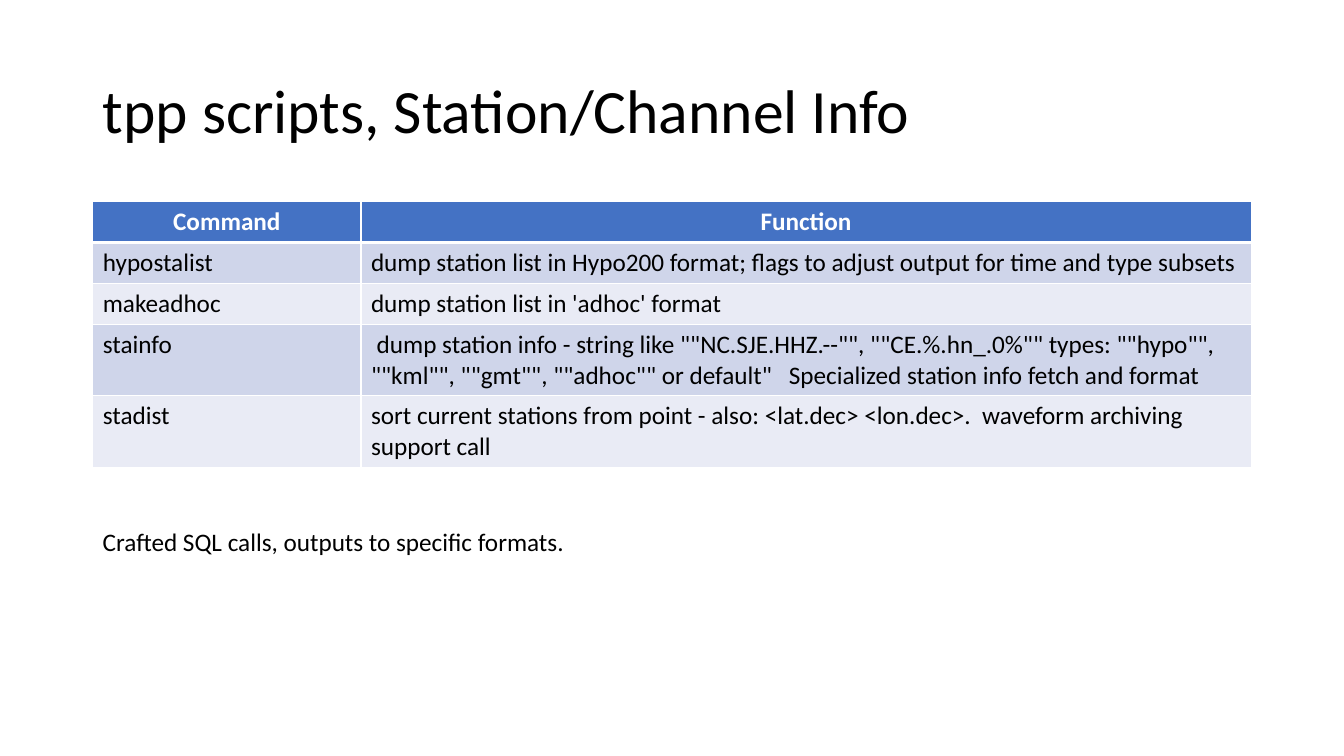
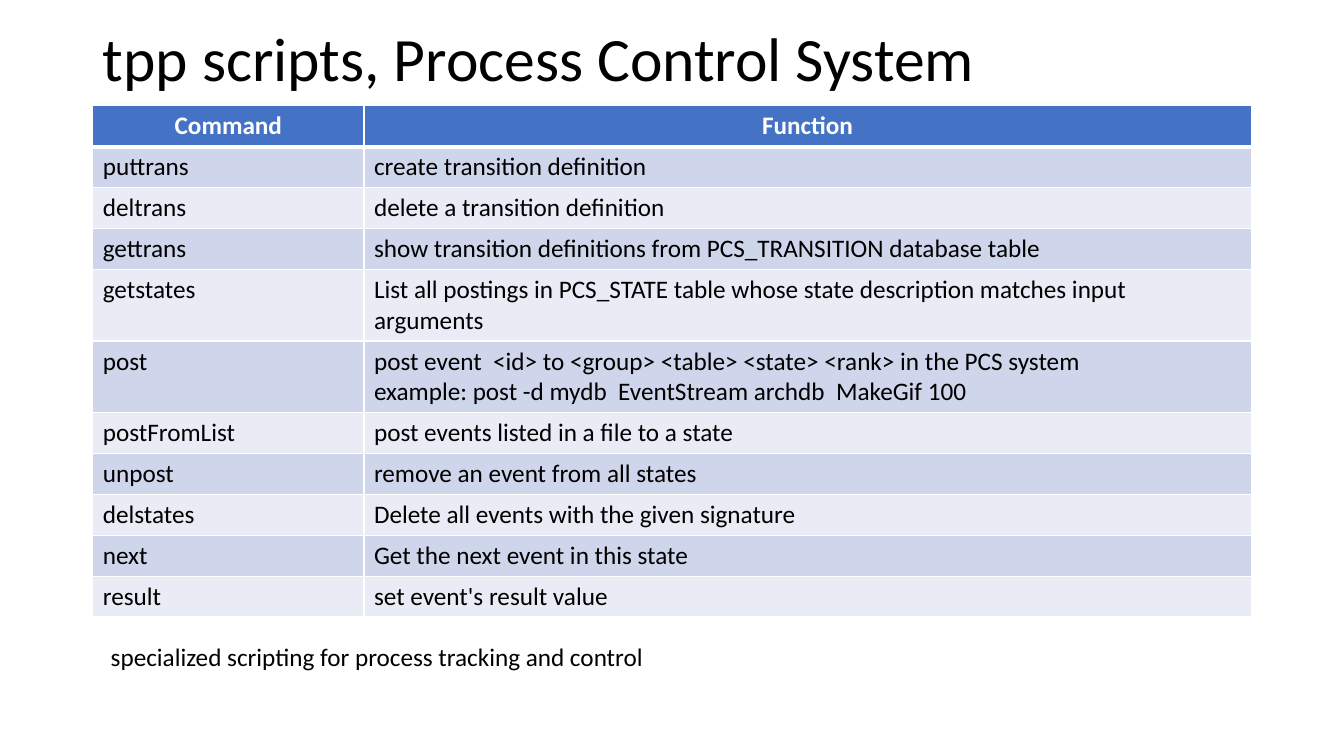
import pptx
import pptx.util
import pptx.dml.color
import pptx.enum.text
import pptx.oxml
import pptx.oxml.ns

Inches = pptx.util.Inches
Pt = pptx.util.Pt
ALIGN = pptx.enum.text.PP_ALIGN
FONT = "Calibri"
BLACK, WHITE, BLUE = "000000", "FFFFFF", "4472C4"
BANDS = ("CFD5EA", "E9EBF5")
LEFT, WIDTH, ROW = 0.92, 11.49, 0.4

STATIONS = [
    ("hypostalist", "dump station list in Hypo200 format; flags to adjust output for time and type subsets"),
    ("makeadhoc", "dump station list in 'adhoc' format"),
    ("stainfo", ' dump station info - string like ""NC.SJE.HHZ.--"", ""CE.%.hn_.0%"" types: '
     '""hypo"", ""kml"", ""gmt"", ""adhoc"" or default"   Specialized station info fetch and format'),
    ("stadist", "sort current stations from point - also: <lat.dec> <lon.dec>.  waveform archiving support call"),
]
CONTROL = [
    ("puttrans", "create transition definition"),
    ("deltrans", "delete a transition definition"),
    ("gettrans", "show transition definitions from PCS_TRANSITION database table"),
    ("getstates", "List all postings in PCS_STATE table whose state description matches input arguments"),
    ("post", "post event  <id> to <group> <table> <state> <rank> in the PCS system\n"
     "example: post -d mydb  EventStream archdb  MakeGif 100"),
    ("postFromList", "post events listed in a file to a state"),
    ("unpost", "remove an event from all states"),
    ("delstates", "Delete all events with the given signature"),
    ("next", "Get the next event in this state"),
    ("result", "set event's result value"),
]


def color(code):
    return pptx.dml.color.RGBColor.from_string(code)


def write(frame, text, size=18, ink=BLACK, bold=False, align=ALIGN.LEFT, line=1.0):
    frame.text = text
    for para in frame.paragraphs:
        para.alignment = align
        para.line_spacing = line
        for run in para.runs:
            run.font.name = FONT
            run.font.size = Pt(size)
            run.font.bold = bold
            run.font.color.rgb = color(ink)


def add_title(slide, text, top, height):
    title = slide.shapes.title
    title.left, title.top = Inches(LEFT), Inches(top)
    title.width, title.height = Inches(WIDTH), Inches(height)
    frame = title.text_frame
    frame.auto_size = pptx.enum.text.MSO_AUTO_SIZE.NONE
    frame.vertical_anchor = pptx.enum.text.MSO_ANCHOR.MIDDLE
    write(frame, text, size=44, line=0.9)


def rule(cell, sides):
    props = cell._tc.get_or_add_tcPr()
    for spot, (side, width) in enumerate(sides.items()):
        edge = pptx.oxml.parse_xml(
            f'<a:ln{side} {pptx.oxml.ns.nsdecls("a")} w="{Pt(width)}"><a:solidFill>'
            f'<a:srgbClr val="{WHITE}"/></a:solidFill></a:ln{side}>')
        props.insert(spot, edge)


def add_grid(slide, rows, top, first):
    rows = [("Command", "Function"), *rows]
    grid = slide.shapes.add_table(len(rows), 2, Inches(LEFT), Inches(top),
                                  Inches(WIDTH), Inches(ROW * len(rows))).table
    for col, width in zip(grid.columns, (first, WIDTH - first)):
        col.width = Inches(width)
    for r, row in enumerate(rows):
        for c, text in enumerate(row):
            cell = grid.cell(r, c)
            cell.fill.solid()
            if r == 0:
                cell.fill.fore_color.rgb = color(BLUE)
                write(cell.text_frame, text, ink=WHITE, bold=True, align=ALIGN.CENTER)
            else:
                cell.fill.fore_color.rgb = color(BANDS[(r - 1) % 2])
                cell.margin_right = Inches(0.12)
                write(cell.text_frame, text)
            rule(cell, {"L": 1, "R": 1, "T": 3 if r == 1 else 1, "B": 3 if r == 0 else 1})


def add_note(slide, text, left, top, width):
    box = slide.shapes.add_textbox(Inches(left), Inches(top), Inches(width), Inches(0.4))
    box.text_frame.word_wrap = True
    write(box.text_frame, text)


def main():
    deck = pptx.Presentation()
    deck.slide_width, deck.slide_height = Inches(13.33), Inches(7.5)
    layout = deck.slide_layouts[5]

    slide = deck.slides.add_slide(layout)
    add_title(slide, "tpp scripts, Station/Channel Info", 0.4, 1.45)
    add_grid(slide, STATIONS, 2, 2.66)
    add_note(slide, "Crafted SQL calls, outputs to specific formats.", LEFT, 5.17, 7.84)

    slide = deck.slides.add_slide(layout)
    add_title(slide, "tpp scripts, Process Control System", 0.09, 1.05)
    add_grid(slide, CONTROL, 1.05, 2.69)
    add_note(slide, "specialized scripting for process tracking and control", 1, 6.31, 11.2)

    deck.save("out.pptx")


if __name__ == "__main__":
    main()
